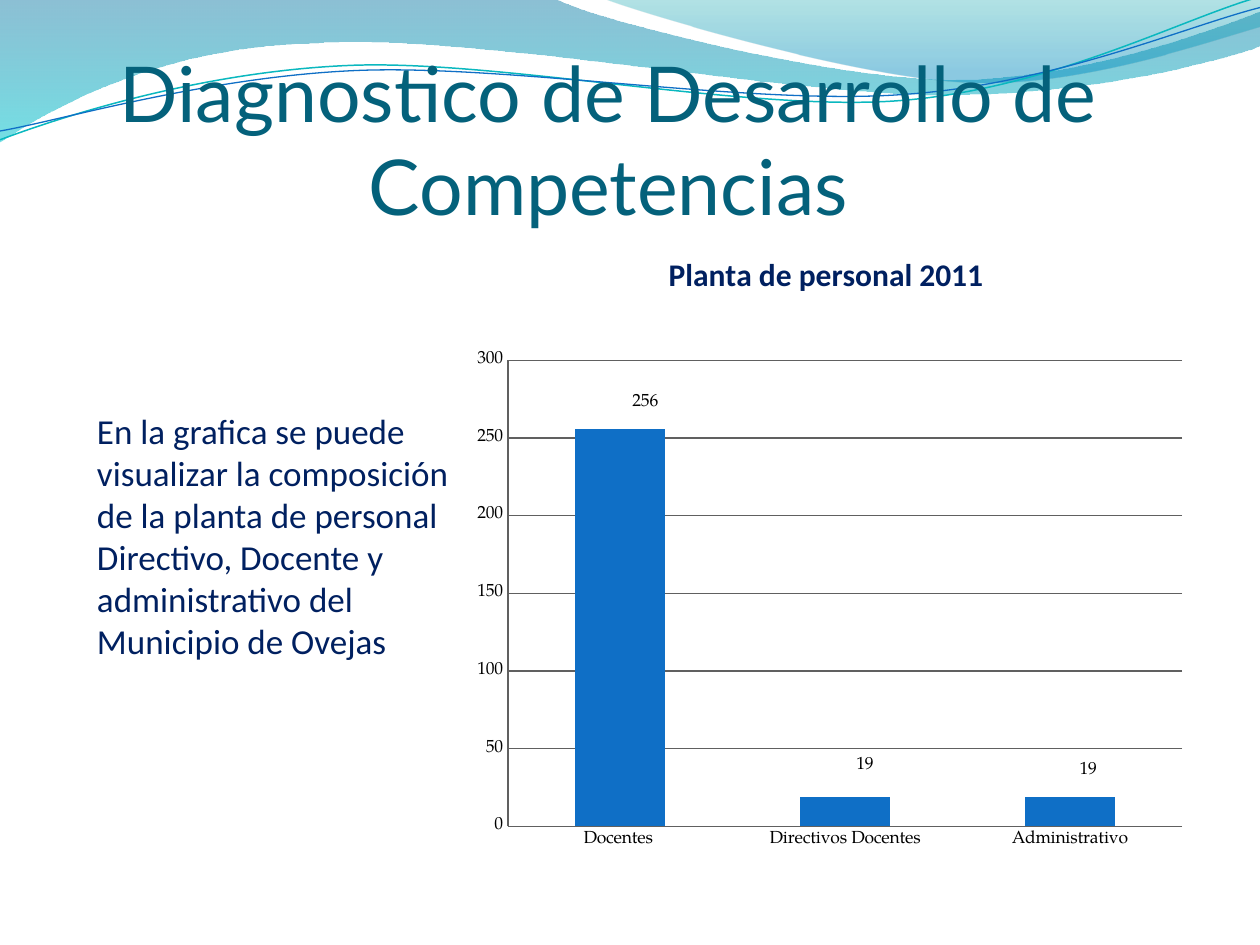
from typing import NamedTuple, Optional

from lxml.etree import SubElement
from pptx import Presentation
from pptx.chart.data import CategoryChartData
from pptx.dml.color import RGBColor
from pptx.enum.chart import XL_CHART_TYPE, XL_LABEL_POSITION as LabelPos, XL_TICK_MARK as Tick
from pptx.enum.text import MSO_ANCHOR as Anchor, PP_ALIGN as Align
from pptx.oxml import parse_xml
from pptx.oxml.ns import nsdecls, qn
from pptx.util import Inches, Pt

W, H = 10, 7.5
TEAL = RGBColor(0x04, 0x61, 0x7B)
NAVY = RGBColor(0x00, 0x20, 0x60)
BLUE = RGBColor(0x0F, 0x6F, 0xC6)
CYAN = RGBColor(0x0A, 0xB8, 0xBF)
DEEP_BLUE = RGBColor(0x00, 0x74, 0xA1)
AQUA = RGBColor(0x00, 0xC6, 0xCF)
GREEN_BLUE = RGBColor(0x00, 0xA1, 0xA9)
SKY = RGBColor(0x00, 0x8B, 0xBF)
GREY = RGBColor(0x60, 0x60, 0x60)
BLACK = RGBColor(0, 0, 0)
UNITS = 100  # outline units per inch


class Stop(NamedTuple):
    pos: int
    color: RGBColor
    alpha: int


class Wave(NamedTuple):
    """A start point, then segments: (x, y) is a line, six numbers a Bezier curve."""
    start: tuple
    segments: list
    stops: tuple = ()
    line: Optional[RGBColor] = None
    width: float = 0


class Box(NamedTuple):
    """Place in percent of the slide's width and height."""
    x: float
    y: float
    w: float
    h: float

    def emu(self) -> tuple:
        return tuple(Inches(share * side / 100)
                     for share, side in zip(self, (W, H, W, H)))


class Label(NamedTuple):
    box: Box
    text: str
    font: str
    size: int
    color: RGBColor
    align: Align
    anchor: Anchor
    side_inset: float
    bottom_inset: float


class Bar(NamedTuple):
    name: str
    value: int
    dx: float  # label shift, in percent of the chart
    dy: float


WAVES = [
    Wave((0, 0), [(4.4, -0.01), (4.76, 0.17, 6.64, 0.63, 7.58, 0.63),
                  (8.53, 0.63, 9.58, 0.26, 10, 0.09), (10.01, 0.36),
                  (9.83, 0.44, 8.7, 0.76, 7.46, 0.75),
                  (6.22, 0.75, 3.82, 0.28, 2.57, 0.34),
                  (1.29, 0.36, 0.46, 0.83, -0.01, 1.13)],
         (Stop(0, DEEP_BLUE, 45), Stop(100, AQUA, 55))),
    Wave((4.79, -0.01), [(5.09, 0.11, 6.82, 0.62, 7.69, 0.65),
                         (8.56, 0.69, 9.61, 0.32, 10, 0.21), (10, 0)],
         (Stop(0, GREEN_BLUE, 30), Stop(80, SKY, 45))),
    Wave((0, 1.11), [(0.48, 0.93, 1.58, 0.57, 2.77, 0.52),
                     (3.95, 0.47, 5.93, 0.89, 7.13, 0.8),
                     (8.33, 0.71, 9.38, 0.15, 9.98, -0.02)], line=CYAN, width=0.85),
    Wave((0, 1.04), [(0.47, 0.96, 1.64, 0.61, 2.83, 0.56),
                     (4.03, 0.51, 5.97, 0.84, 7.17, 0.75),
                     (8.36, 0.67, 9.41, 0.21, 10, 0.06)], line=BLUE, width=0.75),
]
LABELS = [
    Label(Box(7.5, 7.47, 81.6, 16.93), "Diagnostico de Desarrollo de Competencias",
          "Lato", 44, TEAL, Align.CENTER, Anchor.BOTTOM, 0, 0),
    Label(Box(7.5, 42.67, 30, 32.27),
          "En la grafica se puede visualizar la composición de la planta de personal "
          "Directivo, Docente y administrativo del Municipio de Ovejas",
          "Calibri", 20, NAVY, Align.LEFT, Anchor.TOP, 0.02, 0.05),
]
CHART_BOX = Box(36.7, 24.4, 58.3, 66.67)
BARS = [Bar("Docentes ", 256, 3.4, -1.9),
        Bar("Directivos Docentes", 19, 2.7, -2.7),
        Bar("Administrativo", 19, 2.5, -1.9)]


def bend(sp, segments: list) -> None:
    """Turn each three straight steps that stand for a curve into a real curve."""
    steps = iter(sp._element.findall(".//" + qn("a:lnTo")))
    for seg in segments:
        step = next(steps)
        if len(seg) == 6:
            curve = parse_xml(f'<a:cubicBezTo {nsdecls("a")}/>')
            step.addprevious(curve)
            for ctrl in (step, next(steps), next(steps)):
                curve.append(ctrl[0])
                ctrl.getparent().remove(ctrl)


def add_wave(slide, wave: Wave) -> None:
    points = [seg[i:i + 2] for seg in wave.segments for i in range(0, len(seg), 2)]
    (x, y), *rest = [(round(px * UNITS), round(py * UNITS))
                     for px, py in [wave.start, *points]]
    builder = slide.shapes.build_freeform(x, y, scale=Inches(1) / UNITS)
    builder.add_line_segments(rest, close=bool(wave.stops))
    sp = builder.convert_to_shape()
    bend(sp, wave.segments)
    sp.shadow.inherit = False
    if wave.stops:
        sp.line.fill.background()
        stops = "".join(f'<a:gs pos="{s.pos * 1000}"><a:srgbClr val="{s.color}">'
                        f'<a:alpha val="{s.alpha * 1000}"/></a:srgbClr></a:gs>'
                        for s in wave.stops)
        grad = parse_xml(f'<a:gradFill {nsdecls("a")}><a:gsLst>{stops}</a:gsLst>'
                         '<a:lin ang="5400000" scaled="0"/></a:gradFill>')
        sp._element.spPr.find(qn("a:custGeom")).addnext(grad)
    else:
        sp.fill.background()
        sp.line.color.rgb = wave.line
        sp.line.width = Pt(wave.width)


def set_font(font, name: str, size: int, color: RGBColor, bold: bool = False) -> None:
    font.name, font.size, font.bold = name, Pt(size), bold
    font.color.rgb = color


def add_label(slide, label: Label) -> None:
    tf = slide.shapes.add_textbox(*label.box.emu()).text_frame
    tf.word_wrap = True
    tf.vertical_anchor = label.anchor
    tf.margin_left = tf.margin_right = Inches(label.side_inset)
    tf.margin_bottom = Inches(label.bottom_inset)
    p = tf.paragraphs[0]
    p.text, p.alignment = label.text, label.align
    set_font(p.font, label.font, label.size, label.color)


def place(parent, after: str, modes: dict, **percents: float) -> None:
    """Give a chart part a manual layout, put right after the named child."""
    for old in parent.findall(qn("c:layout")):
        parent.remove(old)
    layout = parse_xml(f'<c:layout {nsdecls("c")}><c:manualLayout/></c:layout>')
    shares = {tag: round(value / 100, 4) for tag, value in percents.items()}
    for tag, value in {**modes, **shares}.items():
        SubElement(layout[0], qn(f"c:{tag}")).set("val", str(value))
    if after:
        parent.find(qn(after)).addnext(layout)
    else:
        parent.insert(0, layout)


def add_staff_chart(slide) -> None:
    data = CategoryChartData()
    data.categories = [b.name for b in BARS]
    data.add_series("Series 1", [b.value for b in BARS])
    chart = slide.shapes.add_chart(XL_CHART_TYPE.COLUMN_CLUSTERED,
                                   *CHART_BOX.emu(), data).chart
    set_font(chart.font, "TeX Gyre Pagella", 10, BLACK)
    chart.has_legend = False

    # Title and plot area
    p = chart.chart_title.text_frame.paragraphs[0]
    p.text = "Planta de personal 2011"
    set_font(p.font, "Calibri", 18, NAVY, bold=True)
    chart.chart_title.include_in_layout = False
    edges = {"xMode": "edge", "yMode": "edge"}
    place(chart.chart_title._element, "c:tx", edges, x=27.3, y=2.6)
    place(chart._chartSpace.chart.plotArea, "", {"layoutTarget": "inner", **edges},
          x=6.2, y=20.6, w=91.8, h=74)

    # Axes
    value_axis = chart.value_axis
    value_axis.minimum_scale, value_axis.maximum_scale, value_axis.major_unit = 0, 300, 50
    value_axis.has_major_gridlines = True
    for axis in (value_axis, chart.category_axis):
        axis.major_tick_mark = axis.minor_tick_mark = Tick.NONE
    for part in (value_axis, chart.category_axis, value_axis.major_gridlines):
        part.format.line.color.rgb = GREY
        part.format.line.width = Pt(0.75)

    # Columns and their shifted labels, without leader lines
    plot = chart.plots[0]
    plot.gap_width, plot.vary_by_categories = 150, False
    series = plot.series[0]
    series.format.fill.solid()
    series.format.fill.fore_color.rgb = BLUE
    series.data_labels.show_value = True
    for leader in series._element.findall(".//" + qn("c:showLeaderLines")):
        leader.set("val", "0")
    for i, bar in enumerate(BARS):
        series.points[i].data_label.position = LabelPos.OUTSIDE_END
        d_lbl = series._element.findall(".//" + qn("c:dLbl"))[i]
        place(d_lbl, "c:idx", {}, x=bar.dx, y=bar.dy)


def main() -> None:
    prs = Presentation()
    prs.slide_width, prs.slide_height = Inches(W), Inches(H)
    slide = prs.slides.add_slide(prs.slide_layouts[6])
    for wave in WAVES:
        add_wave(slide, wave)
    for label in LABELS:
        add_label(slide, label)
    add_staff_chart(slide)
    prs.save("out.pptx")


if __name__ == "__main__":
    main()
